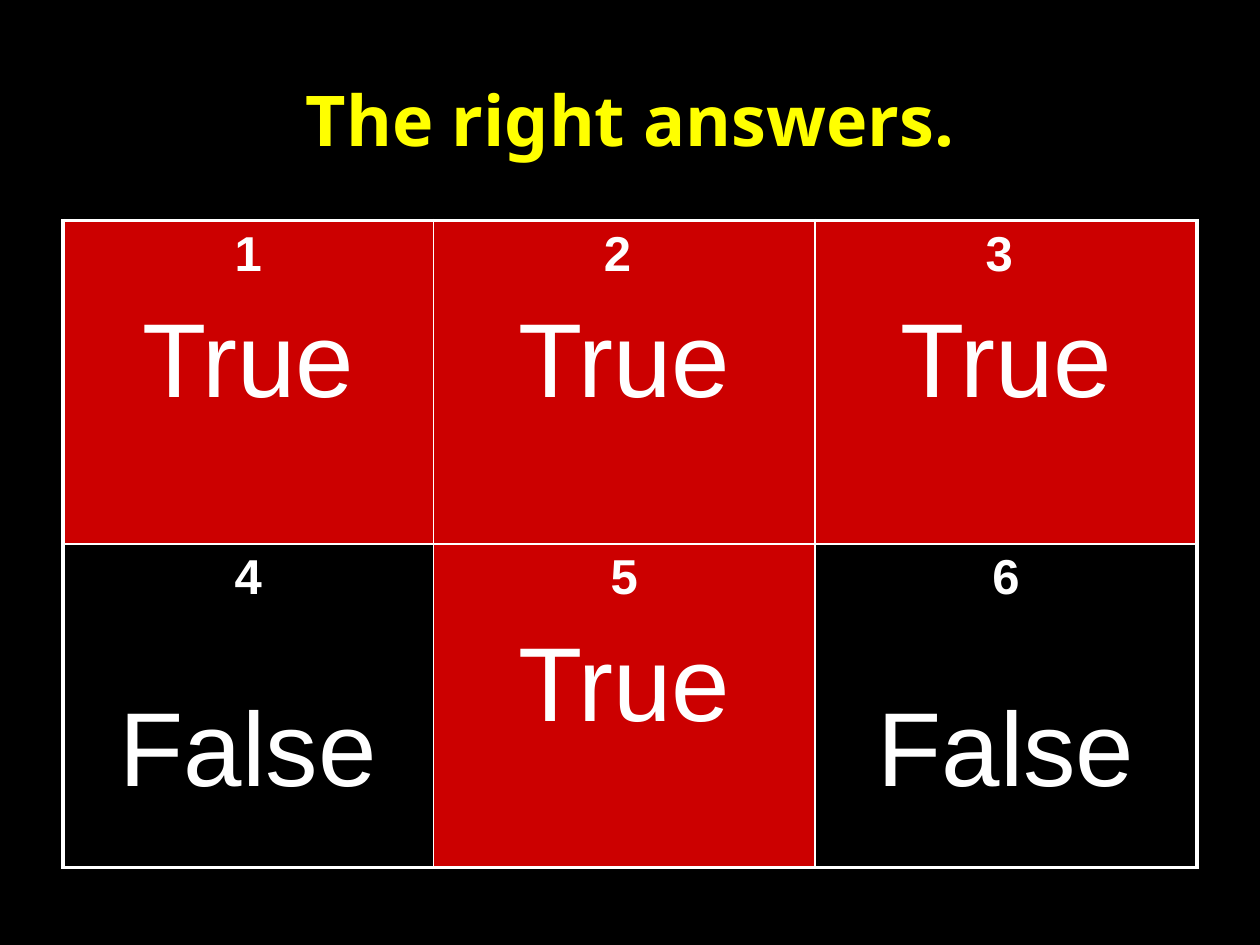
from dataclasses import dataclass

from lxml.etree import SubElement
from pptx import Presentation
from pptx.dml.color import RGBColor as Rgb
from pptx.enum.text import MSO_ANCHOR as Anchor, PP_ALIGN as Align
from pptx.oxml.ns import qn
from pptx.util import Emu, Inches, Pt


@dataclass(frozen=True)
class Theme:
    page: str = "000000"
    title: str = "FFFF00"
    text: str = "FFFFFF"
    true_fill: str = "CC0000"
    title_font: str = "Noto Sans"
    body_font: str = "Arial"
    title_size: int = 40
    number_size: int = 28
    answer_size: int = 60
    answer_gap: float = 12
    false_gap: float = 49.5
    frame: float = 2.25
    rule: float = 1


THEME = Theme()
PAGE_WIDTH, PAGE_HEIGHT = Inches(10), Inches(7.5)
COLUMN_SHARES = (2.94, 3.03, 3.03)
ANSWERS = (
    (("1", "True"), ("2 ", "True"), ("3 ", "True")),
    (("4", "False"), ("5", "True"), ("6", "False")),
)


def write(para, text, *, size, font=THEME.body_font, color=THEME.text, bold=False, before=0):
    para.alignment = Align.CENTER
    para.space_before = Pt(before)
    span = para.add_run()
    span.text = text
    span.font.name = font
    span.font.size = Pt(size)
    span.font.bold = bold
    span.font.color.rgb = Rgb.from_string(color)


def add_title(page, box, text):
    frame = page.shapes.add_textbox(*box).text_frame
    frame.word_wrap = True
    frame.vertical_anchor = Anchor.MIDDLE
    write(frame.paragraphs[0], text, size=THEME.title_size, font=THEME.title_font,
          color=THEME.title, bold=True)


def set_borders(cell, outer_sides):
    """Draw all four sides, with the heavier frame on the outer ones."""
    properties = cell._tc.get_or_add_tcPr()
    for index, side in enumerate("LRTB"):
        width = THEME.frame if side in outer_sides else THEME.rule
        line = SubElement(properties, qn(f"a:ln{side}"), w=str(Pt(width)))
        fill = SubElement(line, qn("a:solidFill"))
        SubElement(fill, qn("a:srgbClr"), val=THEME.text)
        properties.insert(index, line)


def fill_cell(cell, number, answer):
    is_true = answer == "True"
    if is_true:
        cell.fill.solid()
        cell.fill.fore_color.rgb = Rgb.from_string(THEME.true_fill)
    else:
        cell.fill.background()
    frame = cell.text_frame
    write(frame.paragraphs[0], number, size=THEME.number_size, bold=True)
    write(frame.add_paragraph(), answer, size=THEME.answer_size,
          before=THEME.answer_gap if is_true else THEME.false_gap)


def add_answer_table(page, box, answers):
    left, top, width, height = box
    row_count, column_count = len(answers), len(COLUMN_SHARES)
    table = page.shapes.add_table(row_count, column_count, left, top, width, height).table
    table.first_row = table.horz_banding = False
    for column, share in zip(table.columns, COLUMN_SHARES):
        column.width = Emu(int(width * share / sum(COLUMN_SHARES)))
    for row_index, row in enumerate(answers):
        for column_index, (number, answer) in enumerate(row):
            edges = {"L": column_index == 0, "R": column_index == column_count - 1,
                     "T": row_index == 0, "B": row_index == row_count - 1}
            cell = table.cell(row_index, column_index)
            fill_cell(cell, number, answer)
            set_borders(cell, [side for side, outer in edges.items() if outer])


def page_box(left, top, width, height):
    """Turn shares of the page into lengths."""
    return (Emu(int(PAGE_WIDTH * left)), Emu(int(PAGE_HEIGHT * top)),
            Emu(int(PAGE_WIDTH * width)), Emu(int(PAGE_HEIGHT * height)))


def main():
    deck = Presentation()
    deck.slide_width, deck.slide_height = PAGE_WIDTH, PAGE_HEIGHT
    page = deck.slides.add_slide(deck.slide_layouts[6])
    page.background.fill.solid()
    page.background.fill.fore_color.rgb = Rgb.from_string(THEME.page)
    add_title(page, page_box(0.05, 0.04, 0.9, 0.17), "The right answers.")
    add_answer_table(page, page_box(0.05, 0.2333, 0.9, 0.685), ANSWERS)
    deck.save("out.pptx")


if __name__ == "__main__":
    main()
